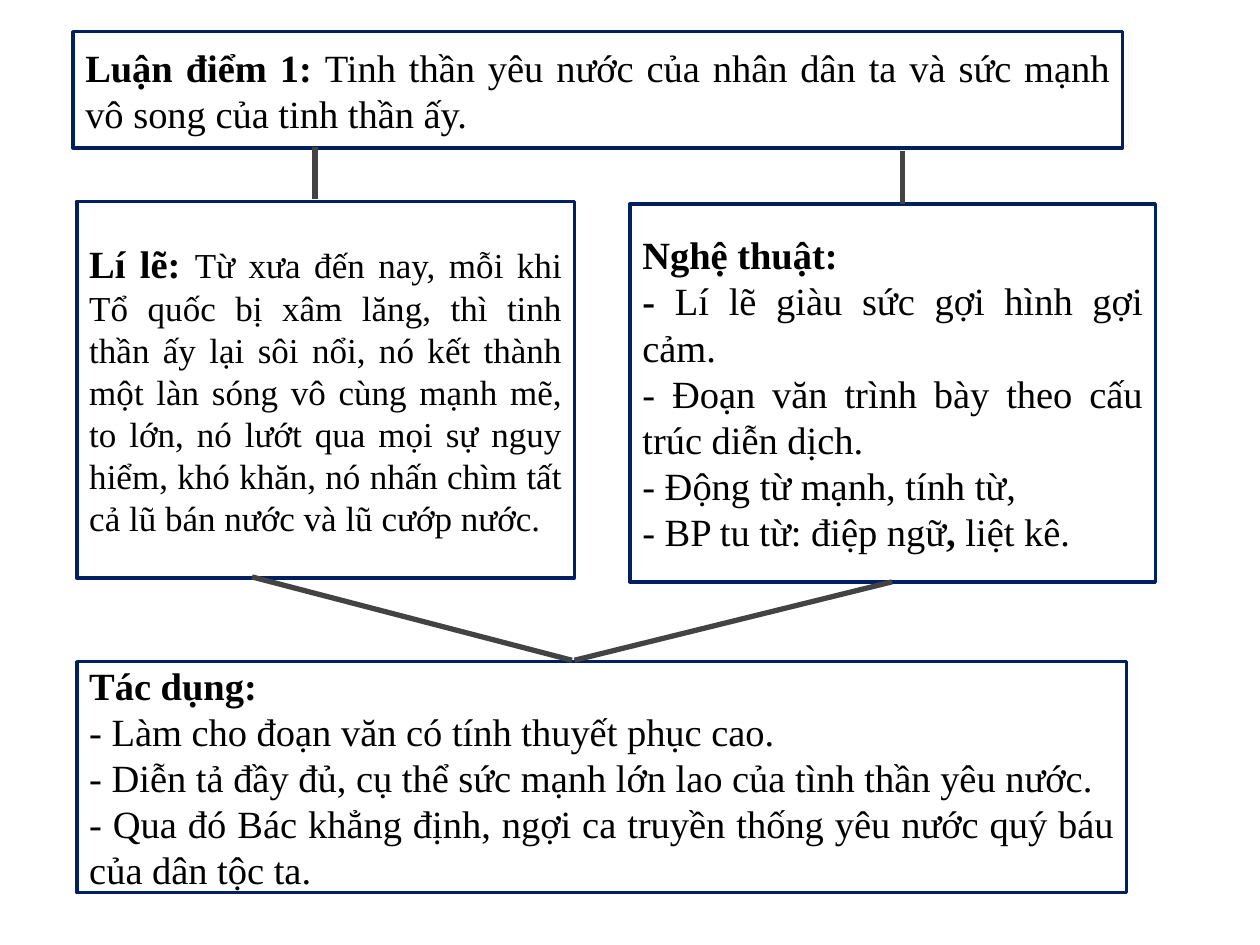
from lxml.etree import SubElement
from pptx import Presentation
from pptx.dml.color import RGBColor
from pptx.enum.shapes import MSO_CONNECTOR, MSO_SHAPE
from pptx.enum.text import MSO_ANCHOR, PP_ALIGN
from pptx.oxml.ns import qn
from pptx.util import Cm, Pt

FONT = "Times New Roman"
WHITE, BLACK, NAVY, GREY = "FFFFFF", "000000", "002060", "434343"


def color(value):
    return RGBColor.from_string(value)


def add_run(p, text, size=22, bold=False):
    r = p.add_run()
    r.text = text
    r.font.name = FONT
    r.font.size = Pt(size)
    r.font.bold = bold
    r.font.color.rgb = color(BLACK)


def add_box(slide, left, top, width, height, paragraphs):
    sp = slide.shapes.add_shape(
        MSO_SHAPE.ROUNDED_RECTANGLE, Cm(left), Cm(top), Cm(width), Cm(height))
    sp.adjustments[0] = 0
    sp.shadow.inherit = False
    sp.fill.solid()
    sp.fill.fore_color.rgb = color(WHITE)
    sp.line.color.rgb = color(NAVY)
    sp.line.width = Pt(2)
    tf = sp.text_frame
    tf.word_wrap = True
    tf.vertical_anchor = MSO_ANCHOR.MIDDLE
    for i, runs in enumerate(paragraphs):
        p = tf.add_paragraph() if i else tf.paragraphs[0]
        p.alignment = PP_ALIGN.JUSTIFY
        for text, style in runs:
            add_run(p, text, **style)


def add_line(slide, x1, y1, x2, y2):
    line = slide.shapes.add_connector(
        MSO_CONNECTOR.STRAIGHT, Cm(x1), Cm(y1), Cm(x2), Cm(y2))
    line.line.color.rgb = color(GREY)
    line.line.width = Pt(3)
    SubElement(line._element.spPr, qn("a:effectLst"))


def main():
    prs = Presentation()
    prs.slide_width, prs.slide_height = Cm(25.4), Cm(19.05)
    slide = prs.slides.add_slide(prs.slide_layouts[6])
    bold, plain, small = {"bold": True}, {}, {"size": 20}

    add_box(slide, 1.47, 0.64, 21.16, 2.34, [
        [("Luận điểm 1: ", bold),
         ("Tinh thần yêu nước của nhân dân ta và sức mạnh vô song "
          "của tinh thần ấy.", plain)],
    ])
    add_box(slide, 1.55, 4.06, 10.03, 7.59, [
        [("Lí lẽ: ", bold),
         ("Từ xưa đến nay, mỗi khi Tổ quốc bị xâm lăng, thì tinh thần ấy "
          "lại sôi nổi, nó kết thành một làn sóng vô cùng mạnh mẽ, to lớn, "
          "nó lướt qua mọi sự nguy hiểm, khó khăn, nó nhấn chìm tất cả "
          "lũ bán nước và lũ cướp nước.", small)],
    ])
    add_box(slide, 12.7, 4.11, 10.59, 7.62, [
        [("Nghệ thuật:", bold)],
        [("- ", bold), ("Lí lẽ giàu sức gợi hình gợi cảm.", plain)],
        [("- Đoạn văn trình bày theo cấu trúc diễn dịch.", plain)],
        [("- Động từ mạnh, tính từ,", plain)],
        [("- BP tu từ: điệp ngữ", plain), (", ", bold), ("liệt kê.", plain)],
    ])
    add_box(slide, 1.55, 13.34, 21.16, 4.65, [
        [("Tác dụng:", bold)],
        [("- Làm cho đoạn văn có tính thuyết phục cao.", plain)],
        [("- Diễn tả đầy đủ, cụ thể sức mạnh lớn lao của tình thần "
          "yêu nước.", plain)],
        [("- Qua đó Bác khẳng định, ngợi ca truyền thống yêu nước quý báu "
          "của dân tộc ta.", plain)],
    ])

    add_line(slide, 6.35, 2.97, 6.35, 4.01)
    add_line(slide, 18.19, 3.05, 18.19, 4.11)
    add_line(slide, 5.08, 11.63, 11.53, 13.31)
    add_line(slide, 11.58, 13.31, 17.98, 11.73)
    prs.save("out.pptx")


if __name__ == "__main__":
    main()
